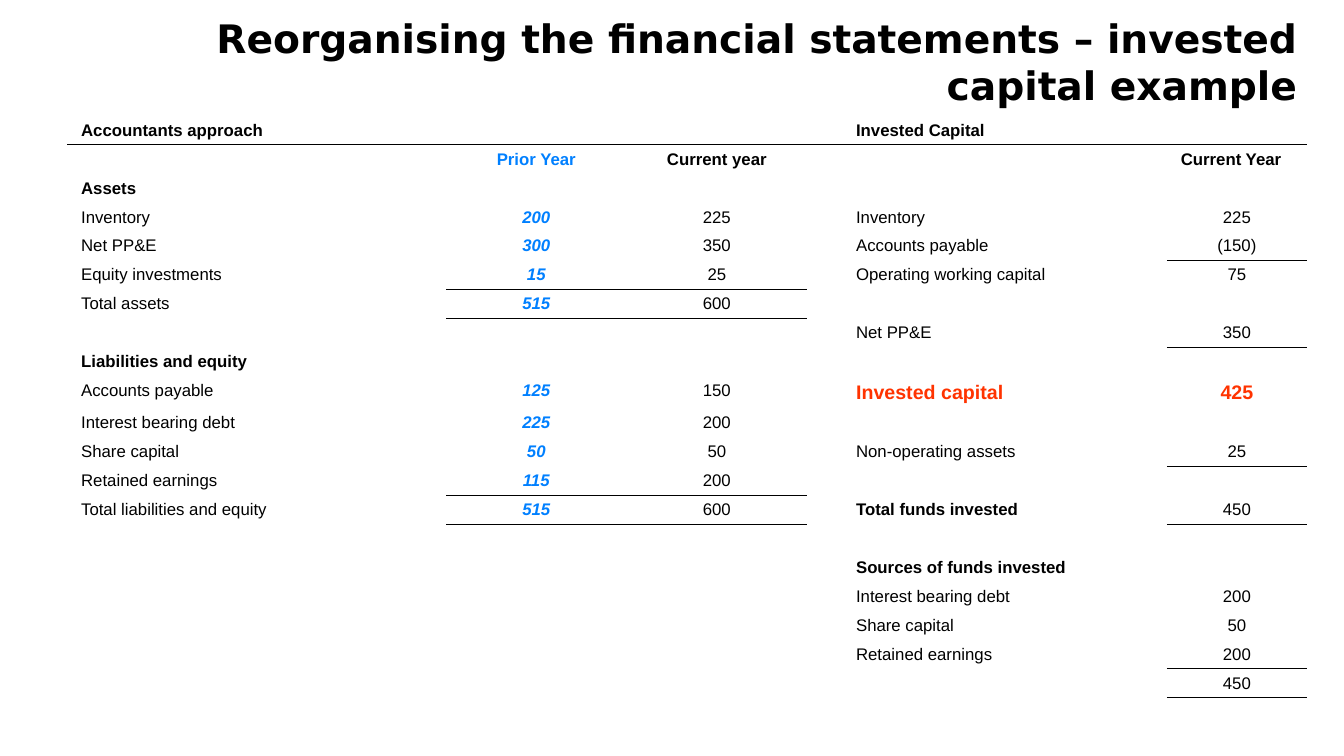
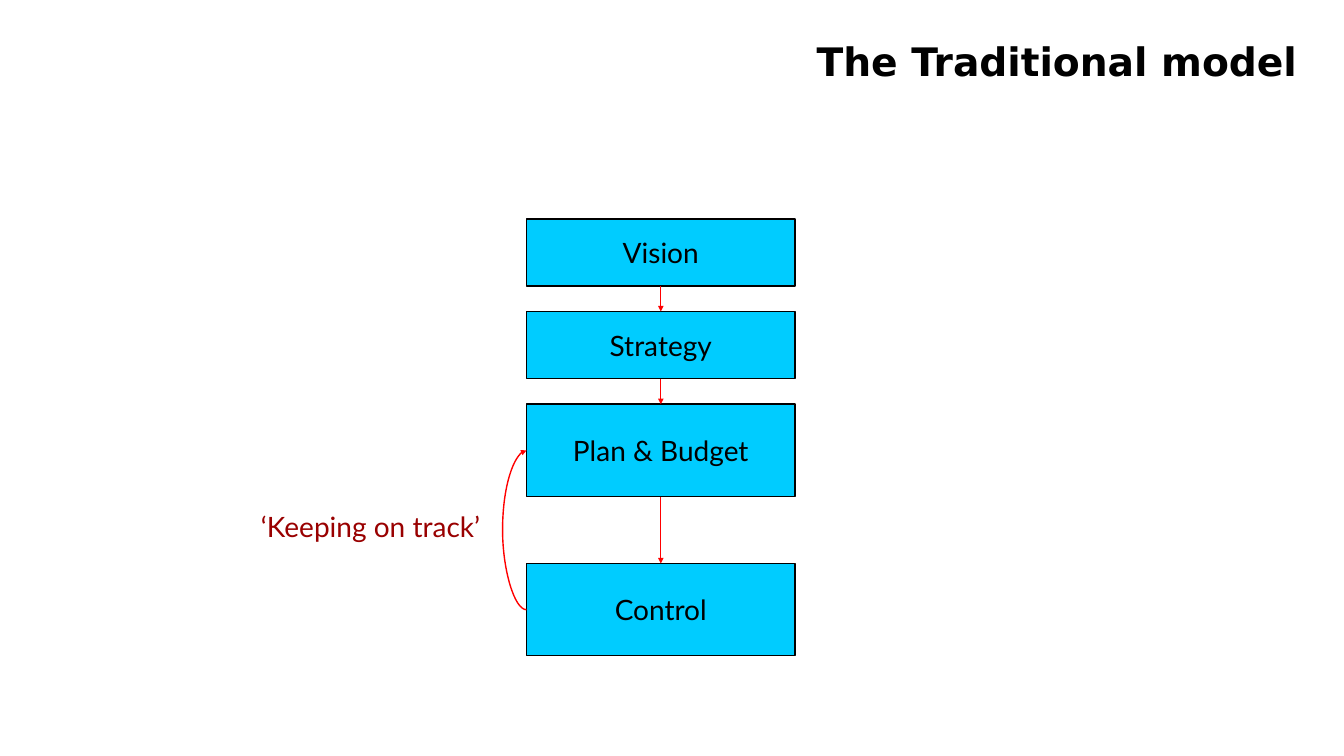
from lxml import etree
from pptx import Presentation
from pptx.dml.color import RGBColor
from pptx.enum.shapes import MSO_CONNECTOR, MSO_SHAPE
from pptx.enum.text import MSO_ANCHOR, MSO_AUTO_SIZE, PP_ALIGN
from pptx.oxml.ns import qn
from pptx.util import Pt

LEFT, CENTER, RIGHT = PP_ALIGN.LEFT, PP_ALIGN.CENTER, PP_ALIGN.RIGHT
MIDDLE = MSO_ANCHOR.MIDDLE
NO_FIT, GROW = MSO_AUTO_SIZE.NONE, MSO_AUTO_SIZE.SHAPE_TO_FIT_TEXT
STRAIGHT, CURVE = MSO_CONNECTOR.STRAIGHT, MSO_CONNECTOR.CURVE
RECTANGLE = MSO_SHAPE.RECTANGLE
TOP_SITE, LEFT_SITE, BOTTOM_SITE = 0, 1, 2

BLACK, BLUE, ORANGE, CYAN, RED, MAROON = (
    "000000", "0080FF", "FF3300", "00CCFF", "FF0000", "990000")
TITLE_FORMAT = {"name": "DejaVu Sans", "size": Pt(28), "bold": True}
TABLE_FORMAT = {"name": "Arial", "size": Pt(12), "bold": False, "italic": False}
MODEL_FORMAT = {"name": "Lato", "size": Pt(20)}
TITLE_BOX = (48, 21.6, 885.6, 43.92)

STATEMENT_TITLE = "Reorganising the financial statements – invested capital example"
STATEMENT = [
    ("Accountants approach", "", "", "", "Invested Capital", ""),
    ("", "Prior Year", "Current year", "", "", "Current Year"),
    ("Assets", "", "", "", "", ""),
    ("Inventory", "200", "225", "", "Inventory", "225"),
    ("Net PP&E", "300", "350", "", "Accounts payable", "(150)"),
    ("Equity investments", "15", "25", "", "Operating working capital", "75"),
    ("Total assets", "515", "600", "", "", ""),
    ("", "", "", "", "Net PP&E", "350"),
    ("Liabilities and equity", "", "", "", "", ""),
    ("Accounts payable", "125", "150", "", "Invested capital", "425"),
    ("Interest bearing debt", "225", "200", "", "", ""),
    ("Share capital", "50", "50", "", "Non-operating assets", "25"),
    ("Retained earnings", "115", "200", "", "", ""),
    ("Total liabilities and equity", "515", "600", "", "Total funds invested", "450"),
    ("", "", "", "", "", ""),
    ("", "", "", "", "Sources of funds invested", ""),
    ("", "", "", "", "Interest bearing debt", "200"),
    ("", "", "", "", "Share capital", "50"),
    ("", "", "", "", "Retained earnings", "200"),
    ("", "", "", "", "", "450"),
]
COLUMN_WIDTHS = (270.6, 129, 129, 25, 232, 100)
PRIOR_COLUMN, LABEL_COLUMNS, RESULT_COLUMNS = 1, (0, 4), (4, 5)
HEADER_ROWS, PERIOD_ROW, RESULT_ROW = 2, 1, 9
ROW_HEIGHT, RESULT_HEIGHT = 20.65, 22.85
TABLE_LEFT, TABLE_TOP = 48, 82.8
BOLD_LABELS = {"Assets", "Liabilities and equity", "Total funds invested",
               "Sources of funds invested"}
RULED_ROWS = {0: (0,), 1: (0, 5, 6, 12, 13), 2: (0, 5, 6, 12, 13), 3: (0,),
              4: (0,), 5: (0, 4, 7, 11, 13, 18, 19)}
NO_STYLE = "{2D5ABB26-0587-4C30-8999-92F81FD0307C}"

MODEL_TITLE = "The Traditional model"
STEPS = [("Vision", 156.4, 48), ("Strategy", 222.48, 48),
         ("Plan & Budget", 288.72, 66), ("Control", 402.48, 66)]
STEP_LEFT, STEP_WIDTH = 376, 192
FEEDBACK = "‘Keeping on track’"
FEEDBACK_BOX = (179.28, 360.72, 275.76, 30.96)
CURVE_WIDTH, CURVE_BULGE = 0.12, 18


def color(value):
    return RGBColor.from_string(value)


def points(values):
    return [Pt(value) for value in values]


def write(frame, text, formats, text_color=BLACK, alignment=LEFT):
    paragraph = frame.paragraphs[0]
    paragraph.alignment = alignment
    run = paragraph.add_run()
    run.text = text
    for name, value in formats.items():
        setattr(run.font, name, value)
    run.font.color.rgb = color(text_color)


def add_titled_slide(presentation, title):
    slide = presentation.slides.add_slide(presentation.slide_layouts[5])
    shape = slide.shapes.title
    shape.left, shape.top, shape.width, shape.height = points(TITLE_BOX)
    frame = shape.text_frame
    frame.auto_size, frame.vertical_anchor = NO_FIT, MIDDLE
    write(frame, title, TITLE_FORMAT, alignment=RIGHT)
    return slide


def add_border(cell, side, visible):
    line = etree.Element(qn("a:" + side), w=str(Pt(1)))
    if visible:
        fill = etree.SubElement(line, qn("a:solidFill"))
        etree.SubElement(fill, qn("a:srgbClr"), val=BLACK)
    else:
        etree.SubElement(line, qn("a:noFill"))
    cell._tc.get_or_add_tcPr().insert(0, line)


def format_cell(cell, row, column, text):
    cell.fill.background()
    cell.margin_left = cell.margin_right = Pt(10)
    add_border(cell, "lnB", row in RULED_ROWS[column])
    add_border(cell, "lnT", row - 1 in RULED_ROWS[column])
    if not text:
        paragraph = cell.text_frame.paragraphs[0]
        ending = etree.SubElement(paragraph._p, qn("a:endParaRPr"), sz="1200")
        etree.SubElement(ending, qn("a:latin"), typeface=TABLE_FORMAT["name"])
        return
    formats, text_color = dict(TABLE_FORMAT), BLACK
    formats["bold"] = row < HEADER_ROWS or text in BOLD_LABELS
    if column == PRIOR_COLUMN:
        formats.update(bold=True, italic=row >= HEADER_ROWS)
        text_color = BLUE
    if row == RESULT_ROW and column in RESULT_COLUMNS:
        formats.update(bold=True, size=Pt(14))
        text_color = ORANGE
    at_left = column in LABEL_COLUMNS or (row, column) == (PERIOD_ROW, 5)
    write(cell.text_frame, text, formats, text_color, LEFT if at_left else CENTER)


def add_statement(slide):
    heights = [RESULT_HEIGHT if row == RESULT_ROW else ROW_HEIGHT
               for row in range(len(STATEMENT))]
    box = points((TABLE_LEFT, TABLE_TOP, sum(COLUMN_WIDTHS), sum(heights)))
    table = slide.shapes.add_table(len(heights), len(COLUMN_WIDTHS), *box).table
    table.first_row = table.horz_banding = False
    table._tbl.tblPr.find(qn("a:tableStyleId")).text = NO_STYLE
    for column, width in zip(table.columns, COLUMN_WIDTHS):
        column.width = Pt(width)
    for row, (height, texts) in enumerate(zip(heights, STATEMENT)):
        table.rows[row].height = Pt(height)
        for column, text in enumerate(texts):
            format_cell(table.cell(row, column), row, column, text)


def add_step(slide, text, top, height):
    shape = slide.shapes.add_shape(
        RECTANGLE, *points((STEP_LEFT, top, STEP_WIDTH, height)))
    shape.shadow.inherit = False
    shape.fill.solid()
    shape.fill.fore_color.rgb = color(CYAN)
    shape.line.color.rgb = color(BLACK)
    shape.line.width = Pt(1)
    frame = shape.text_frame
    frame.word_wrap, frame.vertical_anchor = False, MIDDLE
    write(frame, text, MODEL_FORMAT, alignment=CENTER)
    return shape


def add_arrow(slide, kind, start, start_site, end, end_site):
    arrow = slide.shapes.add_connector(kind, 0, 0, 0, 0)
    arrow.begin_connect(start, start_site)
    arrow.end_connect(end, end_site)
    arrow.line.color.rgb = color(RED)
    arrow.line.width = Pt(1)
    etree.SubElement(arrow.line._get_or_add_ln(), qn("a:tailEnd"),
                     type="triangle", w="sm", len="sm")
    etree.SubElement(arrow._element.spPr, qn("a:effectLst"))
    return arrow


def bend_left(arrow):
    arrow.width = Pt(CURVE_WIDTH)
    properties = arrow._element.spPr
    frame = properties.find(qn("a:xfrm"))
    for name, value in {"rot": "10800000", "flipH": "1", "flipV": "0"}.items():
        frame.set(name, value)
    guides = properties.find(qn("a:prstGeom")).get_or_add_avLst()
    bulge = round(-CURVE_BULGE / CURVE_WIDTH * 100000)
    etree.SubElement(guides, qn("a:gd"), name="adj1", fmla=f"val {bulge}")


def add_model(slide):
    steps = [add_step(slide, *step) for step in STEPS]
    for upper, lower in zip(steps, steps[1:]):
        add_arrow(slide, STRAIGHT, upper, BOTTOM_SITE, lower, TOP_SITE)
    plan, control = steps[-2:]
    bend_left(add_arrow(slide, CURVE, control, LEFT_SITE, plan, LEFT_SITE))
    frame = slide.shapes.add_textbox(*points(FEEDBACK_BOX)).text_frame
    frame.word_wrap, frame.auto_size = True, GROW
    write(frame, FEEDBACK, MODEL_FORMAT, MAROON)


def main():
    presentation = Presentation()
    presentation.slide_width, presentation.slide_height = Pt(960), Pt(540)
    add_statement(add_titled_slide(presentation, STATEMENT_TITLE))
    add_model(add_titled_slide(presentation, MODEL_TITLE))
    presentation.save("out.pptx")


if __name__ == "__main__":
    main()
